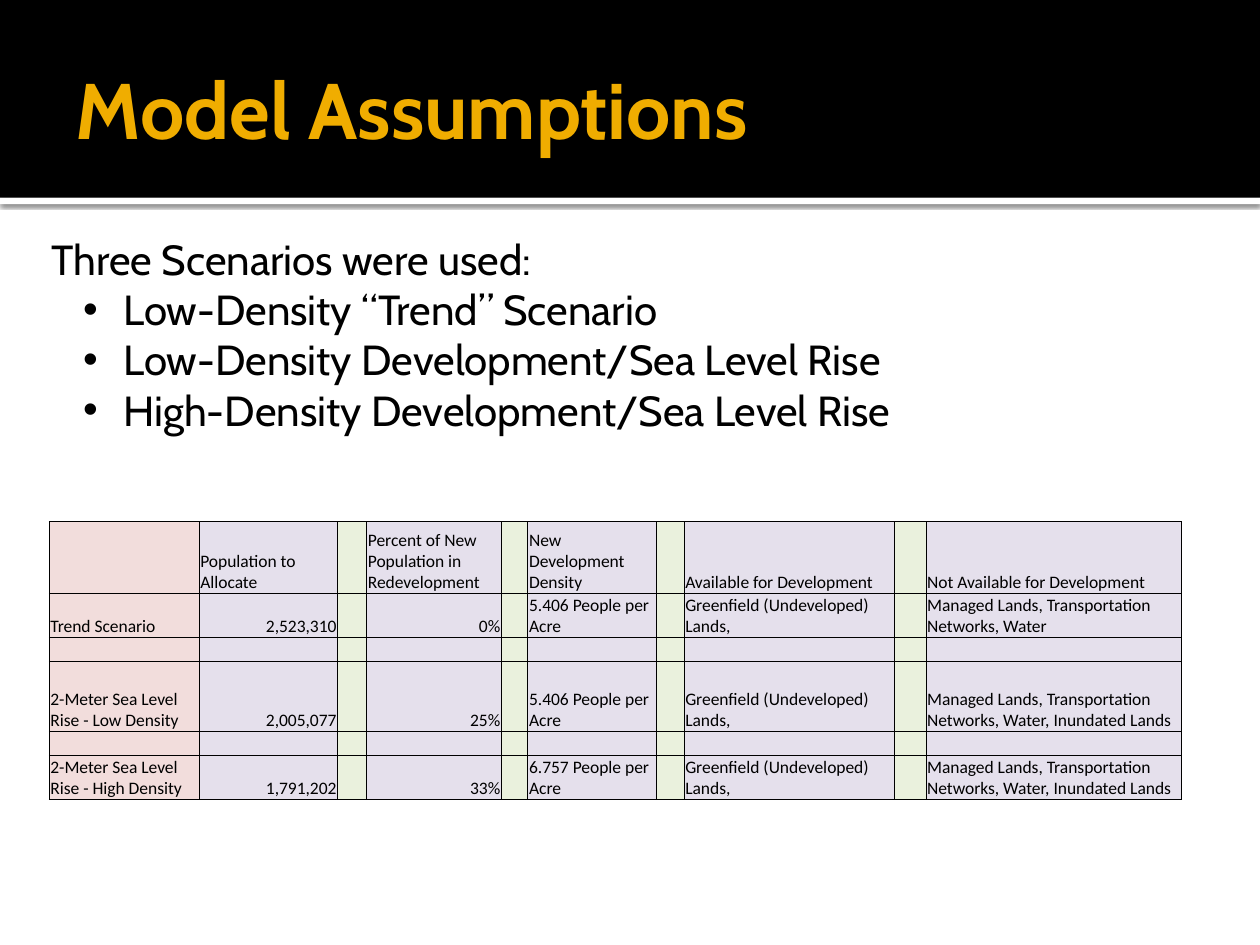
from lxml.etree import SubElement
from pptx import Presentation
from pptx.dml.color import RGBColor
from pptx.enum.shapes import MSO_SHAPE
from pptx.enum.text import MSO_ANCHOR, MSO_AUTO_SIZE, PP_ALIGN
from pptx.oxml import parse_xml
from pptx.oxml.ns import nsdecls, qn
from pptx.util import Inches, Pt

BLACK = RGBColor(0x00, 0x00, 0x00)
WHITE = RGBColor(0xFF, 0xFF, 0xFF)
AMBER = RGBColor(0xF0, 0xAD, 0x00)
PINK = RGBColor(0xF2, 0xDD, 0xDC)
LILAC = RGBColor(0xE5, 0xE0, 0xEC)
GREEN = RGBColor(0xEA, 0xF1, 0xDD)

TITLE = "Model Assumptions"
INTRO = "Three Scenarios were used:"
SCENARIOS = [
    "Low-Density “Trend” Scenario",
    "Low-Density Development/Sea Level Rise",
    "High-Density Development/Sea Level Rise",
]
GREENFIELD = "Greenfield (Undeveloped) Lands,"
MANAGED = "Managed Lands, Transportation Networks, Water"
INUNDATED = MANAGED + ", Inundated Lands"
ROWS = [
    (0.57, ["", "Population to Allocate", "Percent of New Population in Redevelopment",
            "New Development Density", "Available for Development",
            "Not Available for Development"]),
    (0.19, ["Trend Scenario", "2,523,310", "0%", "5.406 People per Acre", GREENFIELD, MANAGED]),
    (0.19, [""] * 6),
    (0.56, ["2-Meter Sea Level Rise - Low Density", "2,005,077", "25%",
            "5.406 People per Acre", GREENFIELD, INUNDATED]),
    (0.19, [""] * 6),
    (0.19, ["2-Meter Sea Level Rise - High Density", "1,791,202", "33%",
            "6.757 People per Acre", GREENFIELD, INUNDATED]),
]
COLUMN_WIDTHS = [1.19, 1.1, 0.23, 1.07, 0.21, 1.02, 0.22, 1.67, 0.25, 2.03]
TEXT_COLUMNS = [0, 1, 3, 5, 7, 9]
NUMBER_COLUMNS = [1, 3]
CELL_FORMAT = {
    "margin_left": Inches(0.01),
    "margin_right": Inches(0.01),
    "margin_top": Inches(0.01),
    "margin_bottom": 0,
    "vertical_anchor": MSO_ANCHOR.BOTTOM,
}
TITLE_FONT = {"name": "Cabin", "size": Pt(45), "bold": True}
BODY_FONT = {"name": "Cabin", "size": Pt(24)}
TABLE_FONT = {"name": "Calibri", "size": Pt(10)}


def apply(target, values):
    for name, value in values.items():
        setattr(target, name, value)


def set_font(font, values, color):
    apply(font, values)
    font.color.rgb = color


def place(shape, left, top, width, height):
    apply(shape, {"left": Inches(left), "top": Inches(top),
                  "width": Inches(width), "height": Inches(height)})


def add_band(slide, layer, top, height, color):
    band = slide.shapes.add_shape(
        MSO_SHAPE.RECTANGLE, 0, Inches(top), Inches(10), Inches(height))
    band.shadow.inherit = False
    band.fill.solid()
    band.fill.fore_color.rgb = color
    band.line.fill.background()
    slide.shapes._spTree.insert(2 + layer, band._element)
    return band


def add_shadow(shape):
    effects = shape._element.spPr.find(qn("a:effectLst"))
    effects.append(parse_xml(
        f'<a:outerShdw {nsdecls("a")} blurRad="{Pt(2.5)}" dist="{Pt(0.8)}" dir="5400000">'
        '<a:srgbClr val="000000"><a:alpha val="60000"/></a:srgbClr></a:outerShdw>'))


def set_bullet(paragraph, margin, indent, character=None):
    properties = paragraph._p.get_or_add_pPr()
    properties.set("marL", str(Inches(margin)))
    properties.set("indent", str(Inches(indent)))
    if character:
        SubElement(properties, qn("a:buFont"), typeface="Arial")
        SubElement(properties, qn("a:buChar"), char=character)
    else:
        SubElement(properties, qn("a:buNone"))


def add_borders(cell):
    properties = cell._tc.get_or_add_tcPr()
    for side in ("lnL", "lnR", "lnT", "lnB"):
        line = SubElement(properties, qn(f"a:{side}"), w=str(Pt(0.5)))
        fill = SubElement(line, qn("a:solidFill"))
        SubElement(fill, qn("a:srgbClr"), val=str(BLACK))


def fill_title(title):
    place(title, 0.5, 0.17, 9, 1.37)
    frame = title.text_frame
    frame.text = TITLE
    apply(frame, {"auto_size": MSO_AUTO_SIZE.NONE, "vertical_anchor": MSO_ANCHOR.MIDDLE,
                  "margin_right": Inches(0.05)})
    paragraph = frame.paragraphs[0]
    paragraph.alignment = PP_ALIGN.LEFT
    set_font(paragraph.runs[0].font, TITLE_FONT, AMBER)


def fill_body(body):
    place(body, 0.31, 1.8, 7.5, 2.42)
    frame = body.text_frame
    frame.text = "\n".join([INTRO] + SCENARIOS)
    apply(frame, {"auto_size": MSO_AUTO_SIZE.NONE, "vertical_anchor": MSO_ANCHOR.TOP})
    for index, paragraph in enumerate(frame.paragraphs):
        paragraph.space_before = Pt(0)
        if index == 0:
            set_bullet(paragraph, 0, 0)
        else:
            paragraph.level = 1
            set_bullet(paragraph, 0.57, -0.32, "•")
        set_font(paragraph.runs[0].font, BODY_FONT, BLACK)


def fill_cell(cell, text, color, alignment):
    apply(cell, CELL_FORMAT)
    add_borders(cell)
    cell.fill.solid()
    cell.fill.fore_color.rgb = color
    paragraph = cell.text_frame.paragraphs[0]
    paragraph.alignment = alignment
    if text:
        run = paragraph.add_run()
        run.text = text
        set_font(run.font, TABLE_FONT, BLACK)
    else:
        SubElement(paragraph._p, qn("a:endParaRPr"), sz="1000")


def add_scenario_table(slide):
    table = slide.shapes.add_table(
        len(ROWS), len(COLUMN_WIDTHS), Inches(0.39), Inches(4.14),
        Inches(sum(COLUMN_WIDTHS)), Inches(sum(height for height, _ in ROWS))).table
    apply(table, {"first_row": False, "horz_banding": False})
    for column, width in zip(table.columns, COLUMN_WIDTHS):
        column.width = Inches(width)
    for row_index, (height, texts) in enumerate(ROWS):
        table.rows[row_index].height = Inches(height)
        row_texts = dict(zip(TEXT_COLUMNS, texts))
        for column_index in range(len(COLUMN_WIDTHS)):
            color = LILAC if column_index in TEXT_COLUMNS else GREEN
            if column_index == 0:
                color = PINK
            is_number = row_index > 0 and column_index in NUMBER_COLUMNS
            fill_cell(table.cell(row_index, column_index), row_texts.get(column_index, ""),
                      color, PP_ALIGN.RIGHT if is_number else PP_ALIGN.LEFT)


def main():
    presentation = Presentation()
    presentation.slide_width = Inches(10)
    presentation.slide_height = Inches(7.5)
    slide = presentation.slides.add_slide(presentation.slide_layouts[1])
    add_shadow(add_band(slide, 0, 1.57, 0.05, WHITE))
    add_band(slide, 1, 0, 1.57, BLACK)
    fill_title(slide.shapes.title)
    fill_body(slide.placeholders[1])
    add_scenario_table(slide)
    presentation.save("out.pptx")


if __name__ == "__main__":
    main()
